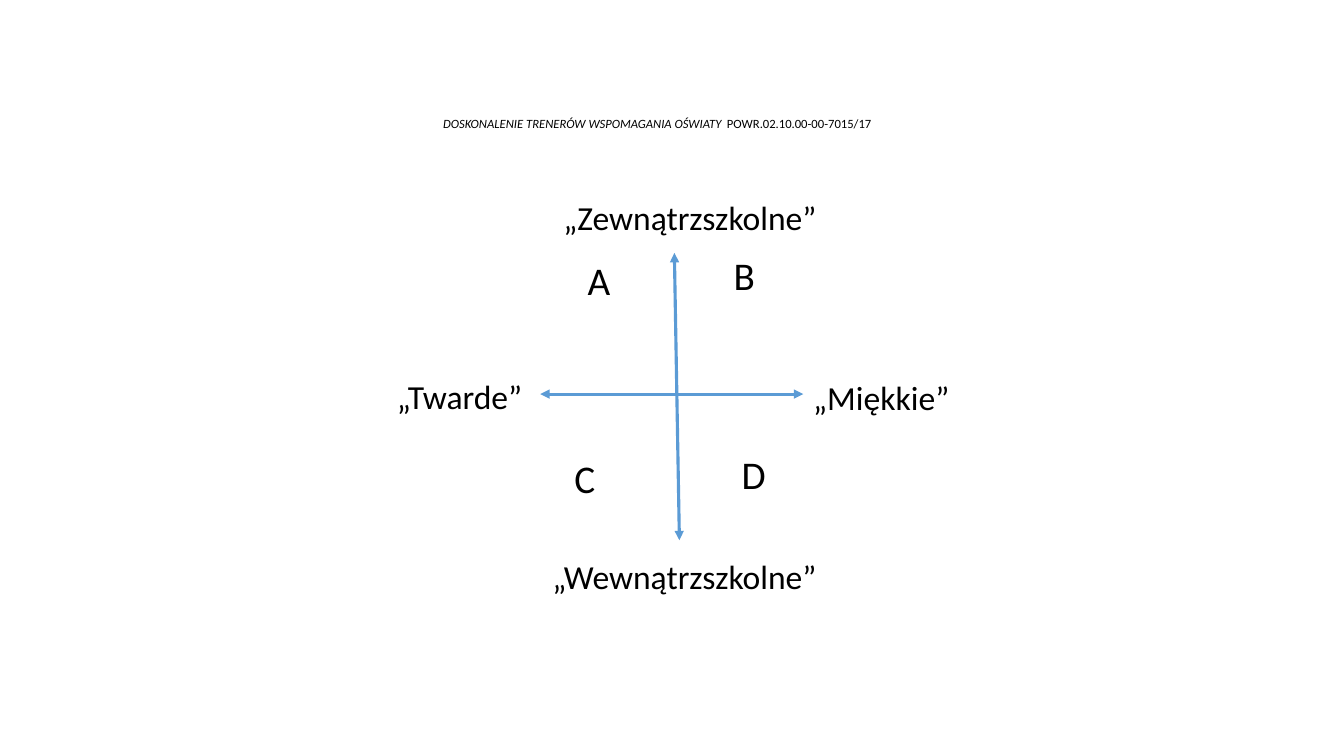
from dataclasses import dataclass

from lxml.etree import SubElement
from pptx import Presentation
from pptx.dml.color import RGBColor
from pptx.enum.shapes import MSO_CONNECTOR as Connector
from pptx.enum.text import MSO_ANCHOR as Anchor, MSO_AUTO_SIZE as AutoSize, PP_ALIGN as Align
from pptx.oxml.ns import qn
from pptx.util import Pt

FONT = "Calibri"
BLACK = "000000"
BLUE = "5B9BD5"
LABEL_SIZE, LETTER_SIZE = 24, 28


@dataclass
class Label:
    text: str
    left: float
    top: float
    width: float
    height: float = 36
    size: float = LABEL_SIZE
    wrap: bool = False


@dataclass
class Axis:
    start: tuple[float, float]
    end: tuple[float, float]


def letter(text: str, left: float, top: float) -> Label:
    return Label(text, left, top, 21, 41, LETTER_SIZE, True)


AXES = [
    Axis((481.7, 180.7), (485.3, 385.9)),
    Axis((385.9, 281.5), (573.8, 281.5)),
]
LABELS = [
    Label("„Twarde”", 276.5, 265, 105.1),
    Label("„Miękkie”", 573.8, 265.7, 113),
    Label("„Zewnątrzszkolne”", 395.3, 136.8, 197.3),
    Label("„Wewnątrzszkolne”", 387.4, 393.8, 205.2),
    letter("A", 412.6, 179.3),
    letter("B", 517, 175.7),
    letter("C", 403.2, 321.1),
    letter("D", 522.7, 318.2),
]


def colour(value: str) -> RGBColor:
    return RGBColor.from_string(value)


def add_run(paragraph, text: str, size: float, italic: bool = False) -> None:
    run = paragraph.add_run()
    run.text = text
    run.font.name = FONT
    run.font.size = Pt(size)
    run.font.italic = italic
    run.font.color.rgb = colour(BLACK)


def add_header(slide) -> None:
    shape = slide.shapes.add_textbox(Pt(56.9), Pt(33.1), Pt(825.1), Pt(87.8))
    frame = shape.text_frame
    frame.word_wrap = True
    frame.vertical_anchor = Anchor.TOP
    frame.margin_top = Pt(51)
    paragraph = frame.paragraphs[0]
    paragraph.alignment = Align.CENTER
    paragraph.line_spacing = 0.9
    add_run(paragraph, "DOSKONALENIE TRENERÓW WSPOMAGANIA OŚWIATY  ", 9, italic=True)
    add_run(paragraph, "POWR.02.10.00-00-7015/17", 9)


def add_axis(slide, axis: Axis) -> None:
    points = [Pt(value) for value in (*axis.start, *axis.end)]
    connector = slide.shapes.add_connector(Connector.STRAIGHT, *points)
    connector.line.color.rgb = colour(BLUE)
    connector.line.width = Pt(2.25)
    line = connector.line._get_or_add_ln()
    for end in ("a:headEnd", "a:tailEnd"):
        SubElement(line, qn(end), type="triangle")
    SubElement(connector._element.spPr, qn("a:effectLst"))


def add_label(slide, label: Label) -> None:
    shape = slide.shapes.add_textbox(
        Pt(label.left), Pt(label.top), Pt(label.width), Pt(label.height)
    )
    frame = shape.text_frame
    frame.word_wrap = label.wrap
    frame.auto_size = AutoSize.SHAPE_TO_FIT_TEXT
    add_run(frame.paragraphs[0], label.text, label.size)


def main() -> None:
    presentation = Presentation()
    presentation.slide_width, presentation.slide_height = Pt(960), Pt(540)
    slide = presentation.slides.add_slide(presentation.slide_layouts[6])

    # Project header
    add_header(slide)

    # Crossing axes
    for axis in AXES:
        add_axis(slide, axis)

    # Axis ends and quadrant letters
    for label in LABELS:
        add_label(slide, label)

    presentation.save("out.pptx")


if __name__ == "__main__":
    main()
